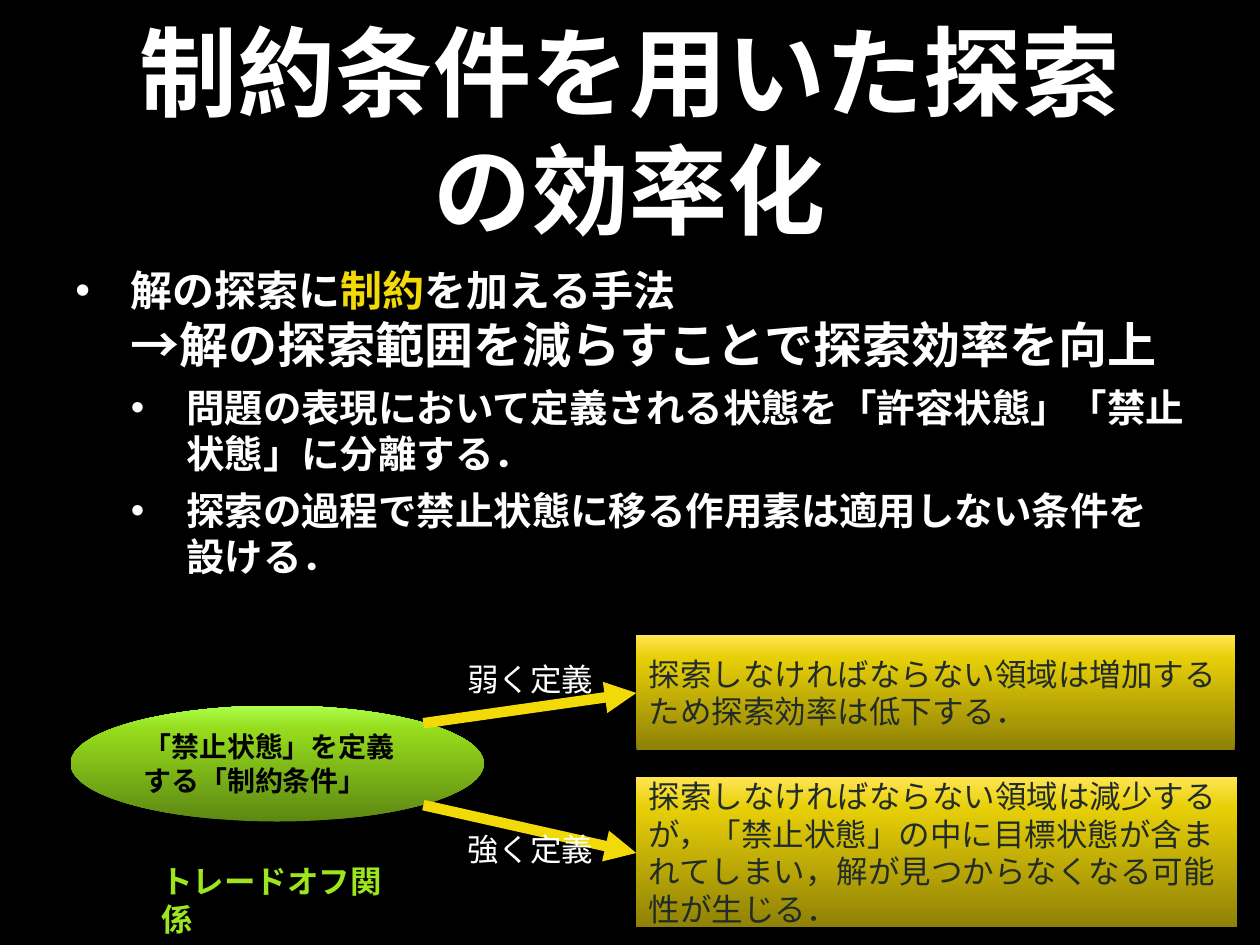
from lxml.etree import SubElement
from pptx import Presentation
from pptx.dml.color import RGBColor
from pptx.enum.shapes import MSO_CONNECTOR, MSO_SHAPE
from pptx.enum.text import MSO_ANCHOR, PP_ALIGN
from pptx.oxml import parse_xml
from pptx.oxml.ns import nsdecls, qn
from pptx.util import Inches, Pt

COLORS = {
    "black": "000000",
    "white": "FFFFFF",
    "yellow": "F2D908",
    "green": "9DE61E",
    "ink": "212C28",
}
GREEN_STOPS = [(0, "5D8812"), (80, "96DC1D"), (100, "ACFF4A")]
YELLOW_STOPS = [(0, "8F8105"), (80, "E7CF08"), (100, "FFE552")]


def style(span, size, color, bold=False):
    span.font.name = "Cabin"
    span.font.size = Pt(size)
    span.font.bold = bold
    span.font.color.rgb = RGBColor.from_string(COLORS[color])


def add_text(left, top, width, height, text, size, color, bold=False, wrap=True):
    box = slide.shapes.add_textbox(Inches(left), Inches(top), Inches(width), Inches(height))
    box.text_frame.word_wrap = wrap
    box.text_frame.text = text
    style(box.text_frame.paragraphs[0].runs[0], size, color, bold)
    return box


deck = Presentation()
deck.slide_width = Inches(10)
deck.slide_height = Inches(7.5)
slide = deck.slides.add_slide(deck.slide_layouts[6])
slide.background.fill.solid()
slide.background.fill.fore_color.rgb = RGBColor.from_string(COLORS["black"])

title = add_text(0.85, 0.12, 8.29, 1.81, "制約条件を用いた探索の効率化", 56, "white", True)
title.text_frame.vertical_anchor = MSO_ANCHOR.MIDDLE
title.text_frame.paragraphs[0].alignment = PP_ALIGN.CENTER

body = slide.shapes.add_textbox(Inches(0.5), Inches(2.05), Inches(9), Inches(3.25))
body.text_frame.word_wrap = True
points = [
    (0, [
        ("解の探索に", 24, "white"),
        ("制約", 24, "yellow"),
        ("を加える手法\v", 24, "white"),
        ("→解の探索範囲を減らすことで探索効率を向上", 28, "white"),
    ]),
    (1, [("問題の表現において定義される状態を「許容状態」「禁止状態」に分離する．", 22, "white")]),
    (1, [("探索の過程で禁止状態に移る作用素は適用しない条件を設ける．", 22, "white")]),
]
for index, (level, pieces) in enumerate(points):
    para = body.text_frame.paragraphs[0] if index == 0 else body.text_frame.add_paragraph()
    para.level = level
    if index:
        para.space_before = Pt(6)
    properties = para._p.get_or_add_pPr()
    properties.set("marL", str(Inches(0.44 * (level + 1))))
    properties.set("indent", str(Inches(-0.44)))
    SubElement(properties, qn("a:buFont"), typeface="Arial")
    SubElement(properties, qn("a:buChar"), char="•")
    for text, size, color in pieces:
        span = para.add_run()
        span.text = text.rstrip("\v")
        style(span, size, color, True)
        if text.endswith("\v"):
            para.add_line_break()

panels = [
    (MSO_SHAPE.OVAL, 0.56, 5.6, 3.28, 0.92, GREEN_STOPS, 16, "black", True,
     "「禁止状態」を定義する「制約条件」"),
    (MSO_SHAPE.RECTANGLE, 5.05, 5.04, 4.75, 0.91, YELLOW_STOPS, 18, "ink", False,
     "探索しなければならない領域は増加するため探索効率は低下する．"),
    (MSO_SHAPE.RECTANGLE, 5.05, 6.17, 4.77, 1.19, YELLOW_STOPS, 18, "ink", False,
     "探索しなければならない領域は減少するが，「禁止状態」の中に目標状態が含まれてしまい，"
     "解が見つからなくなる可能性が生じる．"),
]
for kind, left, top, width, height, stops, size, color, bold, text in panels:
    panel = slide.shapes.add_shape(kind, Inches(left), Inches(top), Inches(width), Inches(height))
    panel.shadow.inherit = False
    panel.line.fill.background()
    stop_xml = "".join(
        f'<a:gs pos="{position * 1000}"><a:srgbClr val="{value}"/></a:gs>'
        for position, value in stops
    )
    gradient = parse_xml(
        f'<a:gradFill {nsdecls("a")} rotWithShape="1"><a:gsLst>{stop_xml}</a:gsLst>'
        '<a:lin ang="16200000" scaled="0"/></a:gradFill>'
    )
    panel._element.spPr.find(qn("a:prstGeom")).addnext(gradient)
    panel.text_frame.word_wrap = True
    panel.text_frame.vertical_anchor = MSO_ANCHOR.MIDDLE
    panel.text_frame.text = text
    para = panel.text_frame.paragraphs[0]
    para.alignment = PP_ALIGN.LEFT
    style(para.runs[0], size, color, bold)

for start, end in [(5.74, 5.5), (6.39, 6.77)]:
    arrow = slide.shapes.add_connector(
        MSO_CONNECTOR.STRAIGHT, Inches(3.36), Inches(start), Inches(5.05), Inches(end)
    )
    arrow.line.color.rgb = RGBColor.from_string(COLORS["yellow"])
    arrow.line.width = Pt(6)
    SubElement(arrow.line._get_or_add_ln(), qn("a:tailEnd"), type="triangle")
    SubElement(arrow._element.spPr, qn("a:effectLst"))

for top, text in [(5.19, "弱く定義"), (6.54, "強く定義")]:
    add_text(3.61, top, 1.2, 0.43, text, 18, "white", wrap=False)
add_text(1.18, 6.79, 2.12, 0.43, "トレードオフ関係", 18, "green", True)

deck.save("out.pptx")
